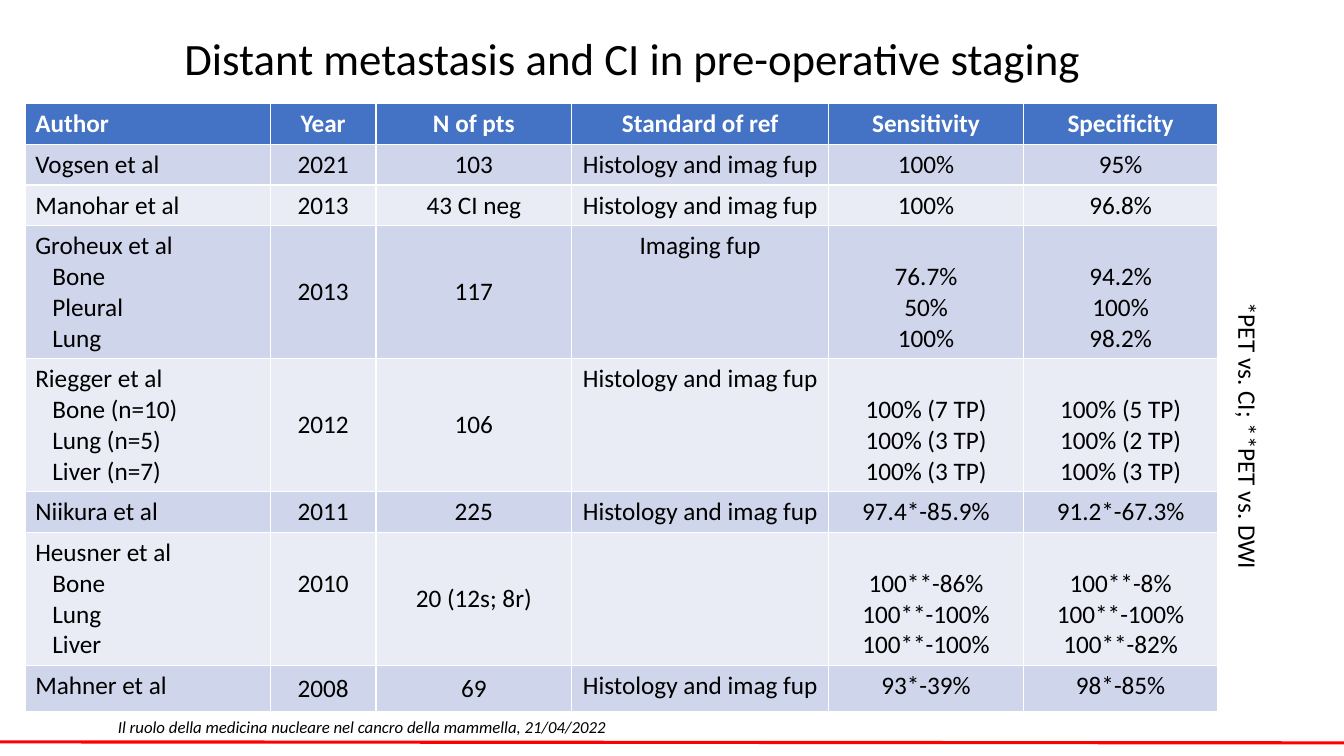
from pptx import Presentation
from pptx.dml.color import RGBColor
from pptx.enum.shapes import MSO_CONNECTOR
from pptx.enum.text import MSO_ANCHOR, PP_ALIGN
from pptx.util import Inches, Pt
from lxml.etree import SubElement
from pptx.oxml.ns import qn

FONT = "Calibri"
BLACK, WHITE, RED = "000000", "FFFFFF", "FF0000"
HEADER_FILL, BAND_FILLS = "4472C4", ("CFD5EA", "E9EBF5")
COLUMN_WIDTHS = (2.43, 1.05, 1.94, 2.55, 1.93, 1.93)
HEADER_HEIGHT, LINE_HEIGHT, CELL_PADDING, LAST_HEIGHT = 0.4, 0.305, 0.1, 0.46
FOLLOW_UP = "Histology and imag fup"
HEADER = ("Author", "Year", "N of pts", "Standard of ref", "Sensitivity", "Specificity")
STUDIES = (
    ("Vogsen et al", "2021", "103", FOLLOW_UP, "100%", "95%"),
    ("Manohar et al", "2013", "43 CI neg", FOLLOW_UP, "100%", "96.8%"),
    ("Groheux et al\nBone\nPleural\nLung", "2013", "117", "Imaging fup",
     "76.7%\n50%\n100%", "94.2%\n100%\n98.2%"),
    ("Riegger et al\nBone (n=10)\nLung (n=5)\nLiver (n=7)", "2012", "106", FOLLOW_UP,
     "100% (7 TP)\n100% (3 TP)\n100% (3 TP)", "100% (5 TP)\n100% (2 TP)\n100% (3 TP)"),
    ("Niikura et al", "2011", "225", FOLLOW_UP, "97.4*-85.9%", "91.2*-67.3%"),
    ("Heusner et al\nBone\nLung\nLiver", "2010", "20 (12s; 8r)", "",
     "100**-86%\n100**-100%\n100**-100%", "100**-8%\n100**-100%\n100**-82%"),
    ("Mahner et al", "2008", "69", FOLLOW_UP, "93*-39%", "98*-85%"),
)


def color(value):
    """Return the colour of a hex string."""
    return RGBColor.from_string(value)


def style(paragraph, size, value=BLACK, bold=False, italic=False):
    """Set the font of a paragraph."""
    font = paragraph.font
    font.name, font.size, font.bold, font.italic = FONT, Pt(size), bold, italic
    font.color.rgb = color(value)


def add_text(slide, box, text, size, wrap=False, italic=False):
    """Add a one-paragraph text box and return it."""
    shape = slide.shapes.add_textbox(*map(Inches, box))
    shape.text_frame.word_wrap = wrap
    paragraph = shape.text_frame.paragraphs[0]
    paragraph.text = text
    style(paragraph, size, italic=italic)
    return shape


def add_title(slide, box):
    """Add the slide title."""
    shape = add_text(slide, box, "Distant metastasis and CI in pre-operative staging", 32, True)
    shape.text_frame.vertical_anchor = MSO_ANCHOR.MIDDLE
    shape.text_frame.paragraphs[0].line_spacing = 0.9


def fill_cell(cell, text, column, fill, value=BLACK, bold=False):
    """Fill a cell, indenting the sites listed under an author."""
    cell.fill.solid()
    cell.fill.fore_color.rgb = color(fill)
    cell.text = text
    for index, paragraph in enumerate(cell.text_frame.paragraphs):
        if column:
            paragraph.alignment = PP_ALIGN.CENTER
        elif index:
            paragraph._p.get_or_add_pPr().set("marL", str(Inches(0.17)))
        style(paragraph, 18, value, bold)


def add_studies(slide, left, top):
    """Add the table of studies with rows as high as their lines."""
    heights = [HEADER_HEIGHT]
    heights += [(study[0].count("\n") + 1) * LINE_HEIGHT + CELL_PADDING for study in STUDIES]
    heights[-1] = LAST_HEIGHT
    frame = slide.shapes.add_table(len(heights), len(HEADER), Inches(left), Inches(top),
                                   Inches(sum(COLUMN_WIDTHS)), Inches(sum(heights)))
    table = frame.table
    for column, width in zip(table.columns, COLUMN_WIDTHS):
        column.width = Inches(width)
    for row, height in zip(table.rows, heights):
        row.height = Inches(height)
    for column, text in enumerate(HEADER):
        fill_cell(table.cell(0, column), text, column, HEADER_FILL, WHITE, True)
    for row, study in enumerate(STUDIES, 1):
        for column, text in enumerate(study):
            cell = table.cell(row, column)
            fill_cell(cell, text, column, BAND_FILLS[(row - 1) % 2])
            if column in (1, 2):
                cell.vertical_anchor = MSO_ANCHOR.MIDDLE
            elif "\n" in text and column:
                cell.vertical_anchor = MSO_ANCHOR.BOTTOM
            if text == "2010":
                cell.margin_bottom = Inches(0.35)


def add_side_note(slide, box):
    """Add the legend that runs down beside the table."""
    add_text(slide, box, "*PET vs. CI; **PET vs. DWI", 18).rotation = 90


def add_footer(slide, box):
    """Add the event line and the red rule under it."""
    add_text(slide, box, "Il ruolo della medicina nucleare nel cancro della mammella, 21/04/2022",
             12, italic=True)
    bottom = box[1] + box[3]
    rule = slide.shapes.add_connector(MSO_CONNECTOR.STRAIGHT, 0, Inches(bottom),
                                      Inches(13.33), Inches(bottom + 0.01))
    rule.line.color.rgb = color(RED)
    rule.line.width = Pt(2.25)
    SubElement(rule._element.spPr, qn("a:effectLst"))


def main():
    """Build and save the slide."""
    presentation = Presentation()
    presentation.slide_width, presentation.slide_height = Inches(13.33), Inches(7.5)
    slide = presentation.slides.add_slide(presentation.slide_layouts[6])
    add_title(slide, (1.73, 0.19, 9.85, 0.83))
    add_studies(slide, 0.25, 1.03)
    add_side_note(slide, (10.94, 4.14, 2.88, 0.4))
    add_footer(slide, (1.07, 7.06, 5.18, 0.3))
    presentation.save("out.pptx")


if __name__ == "__main__":
    main()
